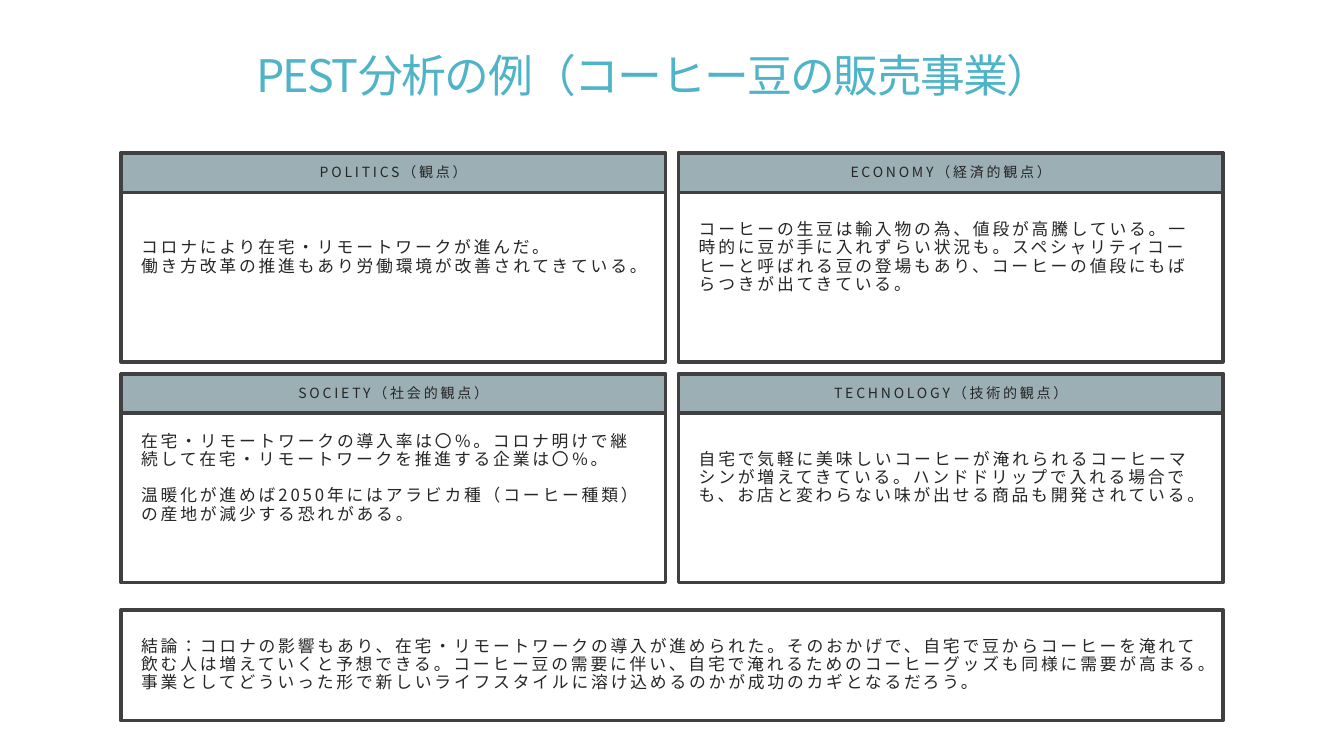
"""Build a PEST analysis slide for a coffee bean business."""
from typing import NamedTuple

from lxml.etree import SubElement
from pptx import Presentation
from pptx.dml.color import RGBColor
from pptx.enum.lang import MSO_LANGUAGE_ID as Lang
from pptx.enum.shapes import MSO_SHAPE as Shape
from pptx.enum.text import MSO_ANCHOR as Anchor, MSO_AUTO_SIZE as AutoSize, PP_ALIGN as Align
from pptx.oxml.ns import qn
from pptx.util import Inches, Pt

FONT = "Noto Sans CJK JP"
INK, BORDER, HEADING_FILL, TITLE_COLOUR = "262626", "404040", "9BAFB5", "50B4C8"
LEFT, TOP = 1.2, 1.52
PANEL_WIDTH, PANEL_HEIGHT, HEADING_HEIGHT = 5.4, 2.07, 0.39
COLUMN_STEP, ROW_STEP = 5.53, 2.19


class Viewpoint(NamedTuple):
    """A PEST factor with its findings and the points between them."""

    heading: str
    findings: tuple[str, ...]
    gap: float = 0


VIEWPOINTS = (
    Viewpoint("POLITICS（観点）", (
        "コロナにより在宅・リモートワークが進んだ。",
        "働き方改革の推進もあり労働環境が改善されてきている。",
    )),
    Viewpoint("ECONOMY（経済的観点）", (
        "コーヒーの生豆は輸入物の為、値段が高騰している。一時的に豆が手に入れずらい状況も。"
        "スペシャリティコーヒーと呼ばれる豆の登場もあり、コーヒーの値段にもばらつきが出てきている。",
    )),
    Viewpoint("SOCIETY（社会的観点）", (
        "在宅・リモートワークの導入率は〇%。コロナ明けで継続して在宅・リモートワークを推進する企業は〇%。",
        "温暖化が進めば2050年にはアラビカ種（コーヒー種類）の産地が減少する恐れがある。",
    ), gap=13),
    Viewpoint("TECHNOLOGY（技術的観点）", (
        "自宅で気軽に美味しいコーヒーが淹れられるコーヒーマシンが増えてきている。"
        "ハンドドリップで入れる場合でも、お店と変わらない味が出せる商品も開発されている。",
    )),
)
CONCLUSION = (
    "結論：コロナの影響もあり、在宅・リモートワークの導入が進められた。"
    "そのおかげで、自宅で豆からコーヒーを淹れて飲む人は増えていくと予想できる。"
    "コーヒー豆の需要に伴い、自宅で淹れるためのコーヒーグッズも同様に需要が高まる。"
    "事業としてどういった形で新しいライフスタイルに溶け込めるのかが成功のカギとなるだろう。"
)


def colour(value: str) -> RGBColor:
    """Turn a hex string into a colour."""
    return RGBColor.from_string(value)


def write(frame, *texts: str, size: float = 12, ink: str = INK, tracking: float = 2,
          leading: float = 0.9, align=Align.LEFT, gap: float = 0, inset: float = 0.2) -> None:
    """Fill a text frame with one formatted paragraph per text."""
    frame.word_wrap = True
    frame.auto_size = AutoSize.NONE
    frame.vertical_anchor = Anchor.MIDDLE
    frame.margin_left = frame.margin_right = Inches(inset)
    frame.margin_top = frame.margin_bottom = Inches(inset)
    for index, text in enumerate(texts):
        paragraph = frame.add_paragraph() if index else frame.paragraphs[0]
        paragraph.alignment = align
        paragraph.line_spacing = leading
        paragraph.space_before = Pt(gap if index else 0)
        run = paragraph.add_run()
        run.text = text
        run.font.size = Pt(size)
        run.font.color.rgb = colour(ink)
        run.font.name = FONT
        run.font.language_id = Lang.JAPANESE
        properties = run.font._element
        properties.set("spc", str(round(tracking * 100)))
        SubElement(properties, qn("a:ea"), typeface=FONT)


def add_box(slide, left: float, top: float, width: float, height: float,
            *texts: str, fill: str = "FFFFFF", **text_format) -> None:
    """Draw a bordered rectangle holding text."""
    box = slide.shapes.add_shape(
        Shape.RECTANGLE, Inches(left), Inches(top), Inches(width), Inches(height))
    box.shadow.inherit = False
    box.fill.solid()
    box.fill.fore_color.rgb = colour(fill)
    box.line.color.rgb = colour(BORDER)
    box.line.width = Pt(2.5)
    write(box.text_frame, *texts, **text_format)


def add_viewpoint(slide, viewpoint: Viewpoint, left: float, top: float) -> None:
    """Draw a findings panel with its heading bar."""
    add_box(slide, left, top, PANEL_WIDTH, PANEL_HEIGHT, *viewpoint.findings, gap=viewpoint.gap)
    add_box(slide, left, top, PANEL_WIDTH, HEADING_HEIGHT, viewpoint.heading,
            fill=HEADING_FILL, size=10, align=Align.CENTER)


def main() -> None:
    """Build and save the slide."""
    deck = Presentation()
    deck.slide_width, deck.slide_height = Inches(13.33), Inches(7.5)
    slide = deck.slides.add_slide(deck.slide_layouts[5])
    title = slide.shapes.title
    title.left, title.top = Inches(2.44), Inches(0.46)
    title.width, title.height = Inches(8.45), Inches(0.64)
    write(title.text_frame, "PEST分析の例（コーヒー豆の販売事業）", size=32,
          ink=TITLE_COLOUR, tracking=-1.2, leading=0.85, inset=0.1)
    for index, viewpoint in enumerate(VIEWPOINTS):
        row, column = divmod(index, 2)
        add_viewpoint(slide, viewpoint, LEFT + column * COLUMN_STEP, TOP + row * ROW_STEP)
    add_box(slide, LEFT, 6.05, COLUMN_STEP + PANEL_WIDTH, 1.1, CONCLUSION)
    deck.save("out.pptx")


if __name__ == "__main__":
    main()
